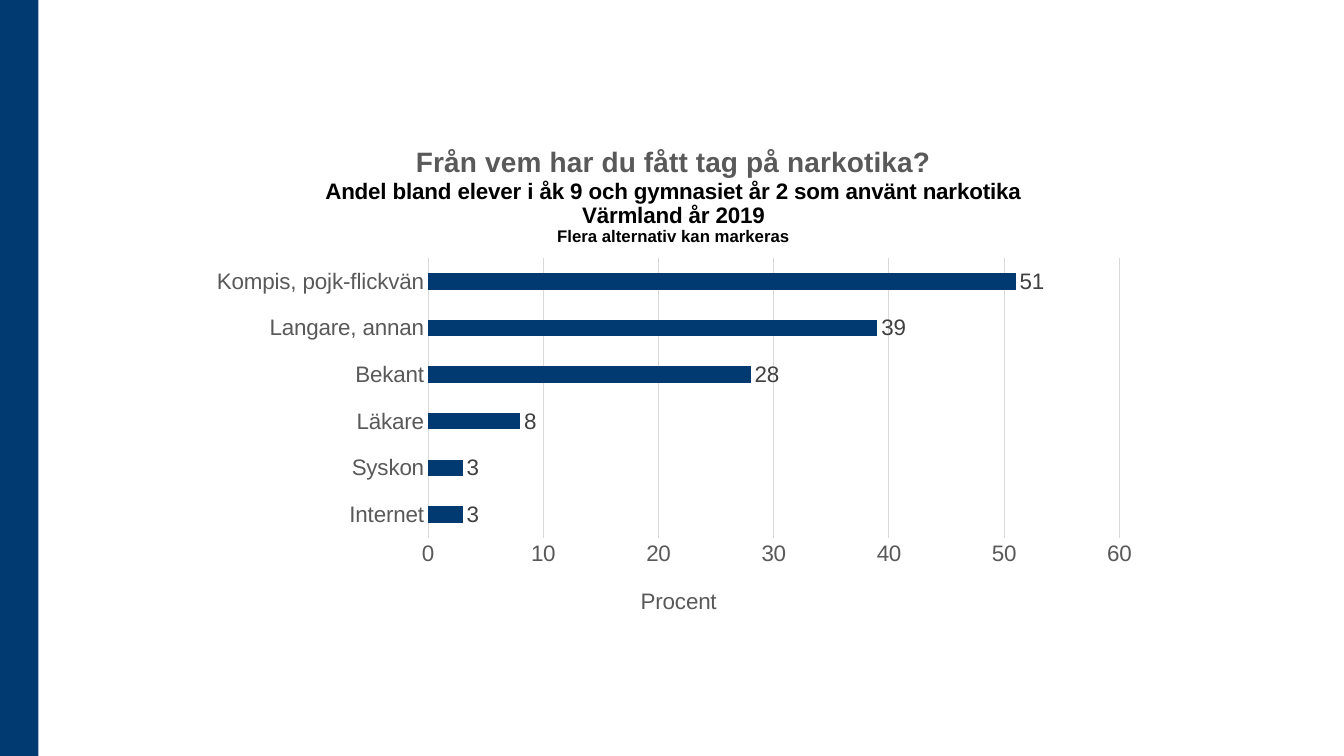
import pptx
import pptx.chart.data
import pptx.dml.color
import pptx.enum.chart
import pptx.enum.shapes
import pptx.oxml
import pptx.util

Pt = pptx.util.Pt
RGB = pptx.dml.color.RGBColor.from_string
XL = pptx.enum.chart
COLORS = {"navy": "003A70", "grey": "595959", "label": "404040",
          "grid": "D9D9D9", "black": "000000"}


def style_font(font, size, color, bold=False):
    font.name = "Arial"
    font.size = Pt(size)
    font.bold = bold
    font.color.rgb = RGB(COLORS[color])


def place(element, index, **fractions):
    """Give a chart part a manual layout, in fractions of the chart area."""
    for old in element.xpath("c:layout"):
        element.remove(old)
    target = '<c:layoutTarget val="inner"/>' if "w" in fractions else ""
    modes = "".join(f'<c:{k}Mode val="edge"/>' for k in "xy")
    values = "".join(f'<c:{k} val="{v}"/>' for k, v in fractions.items())
    element.insert(index, pptx.oxml.parse_xml(
        '<c:layout xmlns:c="http://schemas.openxmlformats.org/drawingml/2006/chart">'
        f"<c:manualLayout>{target}{modes}{values}</c:manualLayout></c:layout>"))


prs = pptx.Presentation()
prs.slide_width, prs.slide_height = Pt(960), Pt(540)
slide = prs.slides.add_slide(prs.slide_layouts[6])

# Band along the left edge
band = slide.shapes.add_shape(pptx.enum.shapes.MSO_SHAPE.RECTANGLE,
                              0, 0, Pt(27.4), prs.slide_height)
band.shadow.inherit = False
band.fill.solid()
band.fill.fore_color.rgb = RGB(COLORS["navy"])
band.line.fill.background()

# Bar chart of sources
sources = pptx.chart.data.CategoryChartData()
sources.categories = ["Internet", "Syskon", "Läkare", "Bekant",
                      "Langare, annan", "Kompis, pojk-flickvän"]
sources.add_series("Series 1", [3, 3, 8, 28, 39, 51])
chart = slide.shapes.add_chart(XL.XL_CHART_TYPE.BAR_CLUSTERED, Pt(141.8), Pt(89.3),
                               Pt(680.4), Pt(361.4), sources).chart
style_font(chart.font, 16, "black")
chart.has_legend = False
place(chart.plots[0]._element.getparent(), 0, x=0.241, y=0.263, w=0.726, h=0.553)

# Chart heading
heading = [("Från vem har du fått tag på narkotika?", 20, "grey"),
           ("Andel bland elever i åk 9 och gymnasiet år 2 som använt narkotika", 16, "black"),
           ("Värmland år 2019", 16, "black"),
           ("Flera alternativ kan markeras", 12, "black")]
heading_frame = chart.chart_title.text_frame
for i, (words, size, color) in enumerate(heading):
    line = heading_frame.add_paragraph() if i else heading_frame.paragraphs[0]
    run = line.add_run()
    run.text = words
    style_font(run.font, size, color, bold=True)
chart.chart_title.include_in_layout = False
place(chart.chart_title._element, 1, x=0.13, y=0.035)

# Bars and their values
bars = chart.plots[0]
bars.gap_width = 182
bars.vary_by_categories = False
share = bars.series[0]
share.format.fill.solid()
share.format.fill.fore_color.rgb = RGB(COLORS["navy"])
bars.has_data_labels = True
bars.data_labels.show_value = True
bars.data_labels.position = XL.XL_LABEL_POSITION.OUTSIDE_END
style_font(bars.data_labels.font, 16, "label")

# Axes
answers, percent = chart.category_axis, chart.value_axis
for axis in (answers, percent):
    axis.major_tick_mark = axis.minor_tick_mark = XL.XL_TICK_MARK.NONE
    style_font(axis.tick_labels.font, 16, "grey")
answers.has_major_gridlines = False
percent.has_major_gridlines = True
for line in (answers.format.line, percent.major_gridlines.format.line):
    line.color.rgb = RGB(COLORS["grid"])
    line.width = Pt(0.75)
percent.format.line.fill.background()
percent.minimum_scale, percent.maximum_scale, percent.major_unit = 0, 60, 10

unit = percent.axis_title.text_frame.paragraphs[0].add_run()
unit.text = "Procent"
style_font(unit.font, 16, "grey")
place(percent.axis_title._element, 1, x=0.46, y=0.905)

prs.save("out.pptx")
